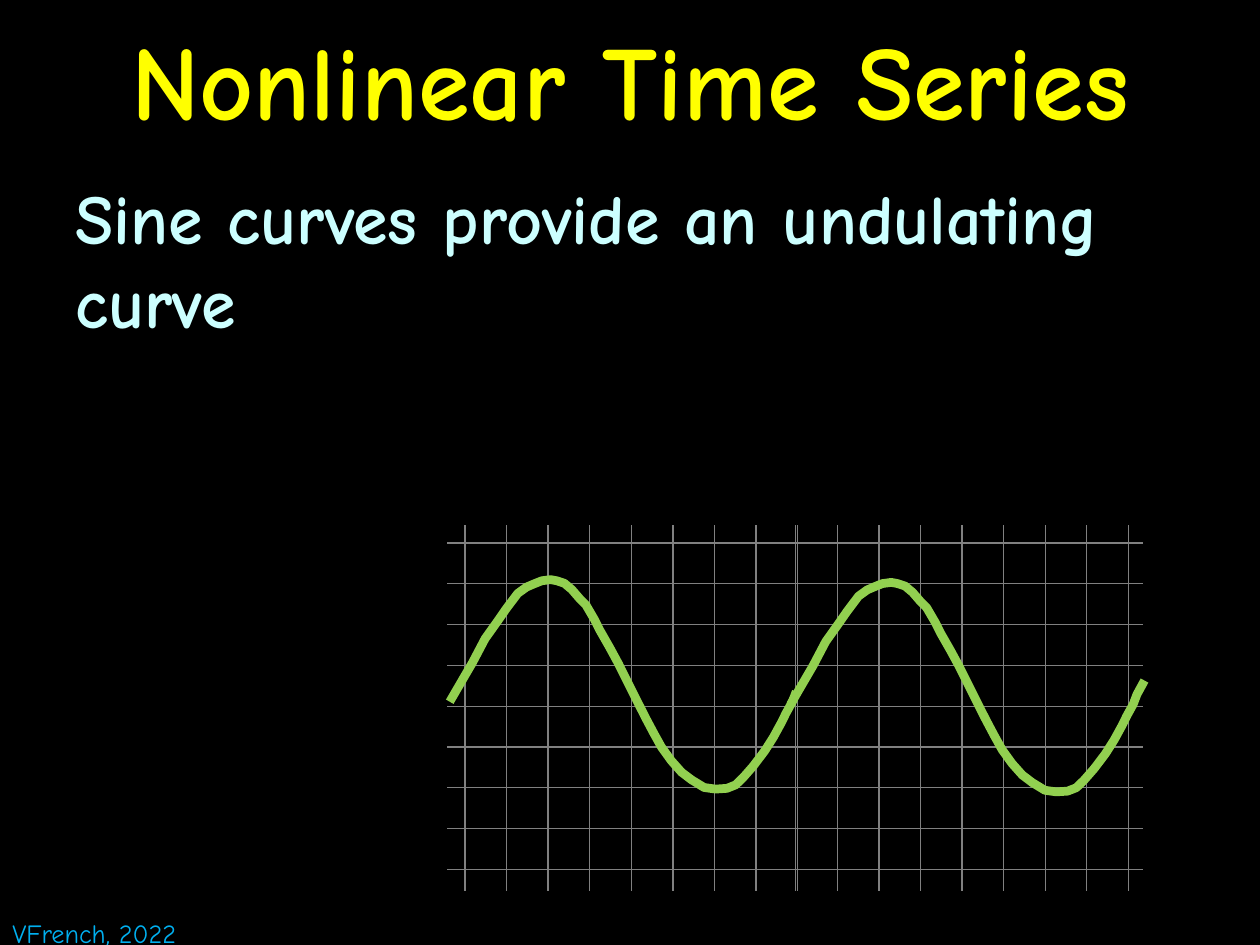
from lxml import etree
from pptx import Presentation
from pptx.dml.color import RGBColor
from pptx.enum import shapes, text
from pptx.oxml import ns
from pptx.util import Pt

COLORS = {"background": "000000", "title": "FFFF00", "body": "CCFFFF",
          "credit": "00B0F0", "grid": "808080", "wave": "92D050"}
FONT = "Comic Neue"

GRID_SIZE = 208.8
GRID_LINES = 9
GRID_INSET = 10.1
COLUMN_STEP, ROW_STEP = 23.76, 23.31

# One period of the wave, in points from its starting point
WAVE = [
    (0, 0), (5, -8.6), (13, -22.3), (20.2, -36), (27.4, -46.1),
    (32.4, -53.3), (38.9, -61.9), (43.9, -65.5), (49, -67.7), (52.6, -69.1),
    (57.6, -69.8), (61.2, -69.1), (65.5, -67.7), (69.8, -64.1), (74.2, -59),
    (77.8, -55.4), (82.8, -46.8), (85.7, -41), (91.4, -31), (96.5, -21.6),
    (102.2, -10.1), (106.6, -1.4), (111.6, 8.6), (116.6, 18), (121, 25.9),
    (126.7, 33.8), (132.5, 40.3), (138.2, 44.6), (145.4, 49), (151.9, 49.9),
    (158.4, 49.5), (163.4, 47.5), (167.8, 43.2), (173.5, 36.7), (180, 28.1),
    (185, 20.2), (189.4, 12.2), (192.2, 6.5), (195.8, 0), (198, -5.8),
]
WAVE_TAIL = [(202.3, -13.7)]


def color(name):
    return RGBColor.from_string(COLORS[name])


def write(frame, content, *, size, fill, bold=False, align=None, before=0):
    para = frame.paragraphs[0]
    para.alignment = align
    para.space_before = Pt(before)
    span = para.add_run()
    span.text = content
    span.font.name = FONT
    span.font.size = Pt(size)
    span.font.bold = bold
    span.font.color.rgb = color(fill)
    return para


def place(shape, left, top, width, height):
    shape.left, shape.top = Pt(left), Pt(top)
    shape.width, shape.height = Pt(width), Pt(height)


def add_title(page, box):
    title = page.shapes.title
    place(title, *box)
    frame = title.text_frame
    frame.auto_size = text.MSO_AUTO_SIZE.NONE
    frame.vertical_anchor = text.MSO_ANCHOR.MIDDLE
    write(frame, "Nonlinear Time Series", size=60, fill="title", bold=True,
          align=text.PP_ALIGN.CENTER)


def add_body(page, box):
    body = page.placeholders[1]
    place(body, *box)
    frame = body.text_frame
    frame.auto_size = text.MSO_AUTO_SIZE.NONE
    para = write(frame, "Sine curves provide an undulating curve", size=40,
                 fill="body", bold=True, before=8)
    props = para._p.get_or_add_pPr()
    props.set("marL", "0")
    props.set("indent", "0")
    etree.SubElement(props, ns.qn("a:buNone"))


def add_credit(page, box):
    credit = page.shapes.add_textbox(*map(Pt, box))
    credit.text_frame.word_wrap = False
    write(credit.text_frame, "VFrench, 2022", size=15, fill="credit")


def add_grid_line(group, x1, y1, x2, y2):
    line = group.shapes.add_connector(shapes.MSO_CONNECTOR.STRAIGHT,
                                      Pt(x1), Pt(y1), Pt(x2), Pt(y2))
    line.line.color.rgb = color("grid")
    line.line.width = Pt(0.75)
    etree.SubElement(line._element.spPr, ns.qn("a:effectLst"))


def add_grid(page, left, top):
    group = page.shapes.add_group_shape()
    for index in range(GRID_LINES):
        x = left + GRID_INSET + index * COLUMN_STEP
        y = top + GRID_INSET + index * ROW_STEP
        add_grid_line(group, x, top, x, top + GRID_SIZE)
        add_grid_line(group, left, y, left + GRID_SIZE, y)


def add_wave(page, left, top, points):
    corners = [(Pt(left + x), Pt(top + y)) for x, y in points]
    builder = page.shapes.build_freeform(*corners[0])
    builder.add_line_segments(corners[1:], close=False)
    wave = builder.convert_to_shape()
    wave.shadow.inherit = False
    wave.fill.background()
    wave.line.color.rgb = color("wave")
    wave.line.width = Pt(5)
    etree.SubElement(wave.line._get_or_add_ln(), ns.qn("a:round"))


def main():
    deck = Presentation()
    deck.slide_width, deck.slide_height = Pt(720), Pt(540)
    page = deck.slides.add_slide(deck.slide_layouts[1])
    page.background.fill.solid()
    page.background.fill.fore_color.rgb = color("background")

    add_title(page, (0, 0, 720, 90))
    add_body(page, (36, 96, 648, 444))
    add_credit(page, (0, 520.5, 119.5, 25))
    for left in (444.6, 255.6):
        add_grid(page, left, 300.2)
    add_wave(page, 257, 401, WAVE)
    add_wave(page, 451.7, 402.6, WAVE + WAVE_TAIL)

    deck.save("out.pptx")


if __name__ == "__main__":
    main()
